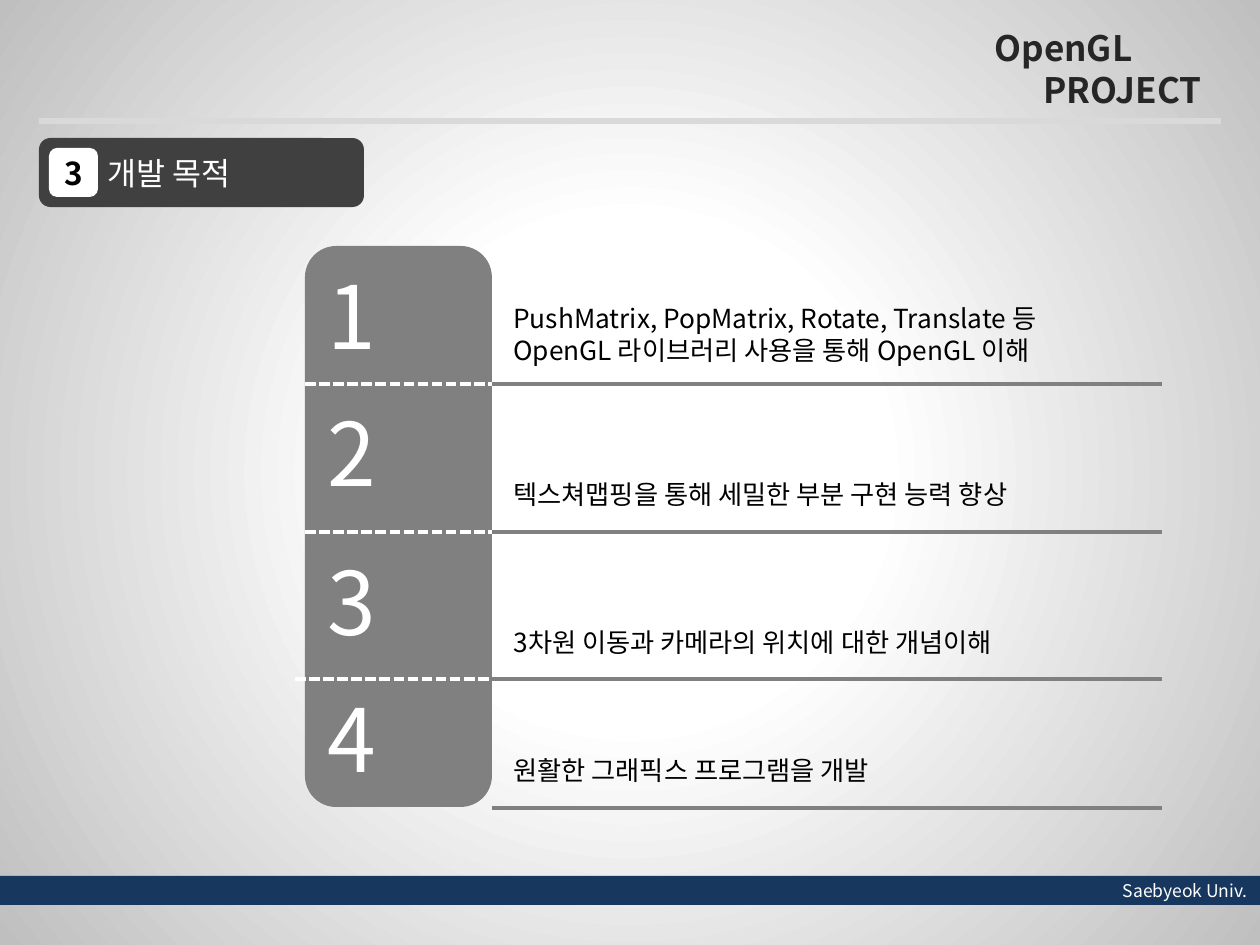
from dataclasses import dataclass

from lxml import etree
from pptx import Presentation
from pptx import util as u
from pptx.dml.color import RGBColor
from pptx.enum import dml, shapes, text
from pptx.oxml.ns import qn


@dataclass(frozen=True)
class Theme:
    font: str = "Noto Sans CJK KR"
    white: str = "FFFFFF"
    black: str = "000000"
    edge: str = "BFBFBF"
    rule: str = "D9D9D9"
    gray: str = "808080"
    dark: str = "404040"
    ink: str = "262626"
    navy: str = "17375E"
    small: int = 10
    body: int = 15
    label: int = 18
    head: int = 20
    digit: int = 50


T = Theme()
KIND = shapes.MSO_SHAPE
LEFT, CENTER, RIGHT = (text.PP_ALIGN.LEFT, text.PP_ALIGN.CENTER,
                       text.PP_ALIGN.RIGHT)
TOP, MID, LOW = (text.MSO_ANCHOR.TOP, text.MSO_ANCHOR.MIDDLE,
                 text.MSO_ANCHOR.BOTTOM)

# Goal lines, top of the number, bottom of the text, height of the rule
GOALS = [
    (["PushMatrix, PopMatrix, Rotate, Translate 등",
      "OpenGL 라이브러리 사용을 통해 OpenGL 이해"], 256, 372, 384),
    (["텍스쳐맵핑을 통해 세밀한 부분 구현 능력 향상"], 393, 516, 532),
    (["3차원 이동과 카메라의 위치에 대한 개념이해"], 542, 664, 679),
    (["원활한 그래픽스 프로그램을 개발"], 679, 792, 808),
]
DASHES = [(305, 501), (305, 512), (295, 493)]


def px(*nums):
    return [u.Emu(round(n * 914400 / 126)) for n in nums]


def rgb(code):
    return RGBColor.from_string(code)


def write(shape, lines, size=T.body, color=T.black, bold=False,
          align=LEFT, anchor=TOP, indents=()):
    """Fill a shape with one paragraph per line; indents are px per line."""
    frame = shape.text_frame
    frame.word_wrap = True
    frame.auto_size = text.MSO_AUTO_SIZE.NONE
    frame.vertical_anchor = anchor
    frame.text = "\n".join(lines)
    for para in frame.paragraphs:
        para.alignment = align
        for run in para.runs:
            font = run.font
            font.name, font.size, font.bold = T.font, u.Pt(size), bold
            font.color.rgb = rgb(color)
            east = etree.SubElement(font._element, qn("a:ea"))
            east.set("typeface", T.font)
    for para, dent in zip(frame.paragraphs, indents):
        para._p.get_or_add_pPr().set("marL", str(px(dent)[0]))


def label(slide, box, lines, **fmt):
    write(slide.shapes.add_textbox(*px(*box)), lines, **fmt)


def block(slide, kind, box, fill):
    shape = slide.shapes.add_shape(kind, *px(*box))
    shape.shadow.inherit = False
    shape.fill.solid()
    shape.fill.fore_color.rgb = rgb(fill)
    shape.line.fill.background()
    return shape


def rule(slide, left, right, y, color, dash=None):
    line = slide.shapes.add_connector(
        shapes.MSO_CONNECTOR.STRAIGHT, *px(left, y, right, y))
    line.line.color.rgb = rgb(color)
    line.line.width = u.Pt(2)
    if dash:
        line.line.dash_style = dash
    etree.SubElement(line.element.find(qn("p:spPr")), qn("a:effectLst"))


def glow(slide):
    """Give the background a round gradient from white to gray."""
    fill = slide.background.fill
    fill.gradient()
    for stop, color, pos in zip(fill.gradient_stops,
                                (T.white, T.edge), (0.32, 1)):
        stop.color.rgb = rgb(color)
        stop.position = pos
    grad = slide.background.element.find(".//" + qn("a:gradFill"))
    grad.remove(grad.find(qn("a:lin")))
    way = etree.SubElement(grad, qn("a:path"))
    way.set("path", "circle")
    rect = etree.SubElement(way, qn("a:fillToRect"))
    for side in "ltrb":
        rect.set(side, "50000")


def header(slide):
    label(slide, (896, 20, 335, 97), ["OpenGL", "PROJECT"], size=T.head,
          color=T.ink, bold=True, align=CENTER, indents=(0, 118))
    block(slide, KIND.RECTANGLE, (39, 118, 1182, 6), T.rule)
    block(slide, KIND.FLOWCHART_ALTERNATE_PROCESS, (39, 138, 325, 69), T.dark)
    badge = block(slide, KIND.ROUNDED_RECTANGLE, (49, 148, 49, 49), T.white)
    write(badge, ["3"], size=T.label, bold=True, align=CENTER, anchor=MID)

    title = slide.shapes.title
    title.left, title.top, title.width, title.height = px(95, 138, 269, 69)
    write(title, ["개발 목적"], size=T.label, color=T.white, anchor=MID)
    slide.shapes.element.append(title.element)  # bring in front of its tab


def goals(slide):
    block(slide, KIND.ROUNDED_RECTANGLE, (305, 246, 187, 561), T.gray)
    for (left, right), goal in zip(DASHES, GOALS):
        rule(slide, left, right, goal[-1], T.white, dml.MSO_LINE.SQUARE_DOT)
    for num, (lines, top, base, y) in enumerate(GOALS, 1):
        label(slide, (315, top, 217, 118), [str(num)],
              size=T.digit, color=T.white)
        rule(slide, 492, 1162, y, T.gray)
        high = 12 + 32 * len(lines)
        label(slide, (501, base - high, 650, high), lines, anchor=LOW)


def footer(slide):
    bar = block(slide, KIND.RECTANGLE, (0, 876, 1260, 29), T.navy)
    write(bar, ["Saebyeok Univ."], size=T.small, color=T.white,
          align=RIGHT, anchor=MID)


def main():
    deck = Presentation()
    deck.slide_width, deck.slide_height = px(1260, 945)
    slide = deck.slides.add_slide(deck.slide_layouts[5])
    glow(slide)
    header(slide)
    goals(slide)
    footer(slide)
    deck.save("out.pptx")


if __name__ == "__main__":
    main()
